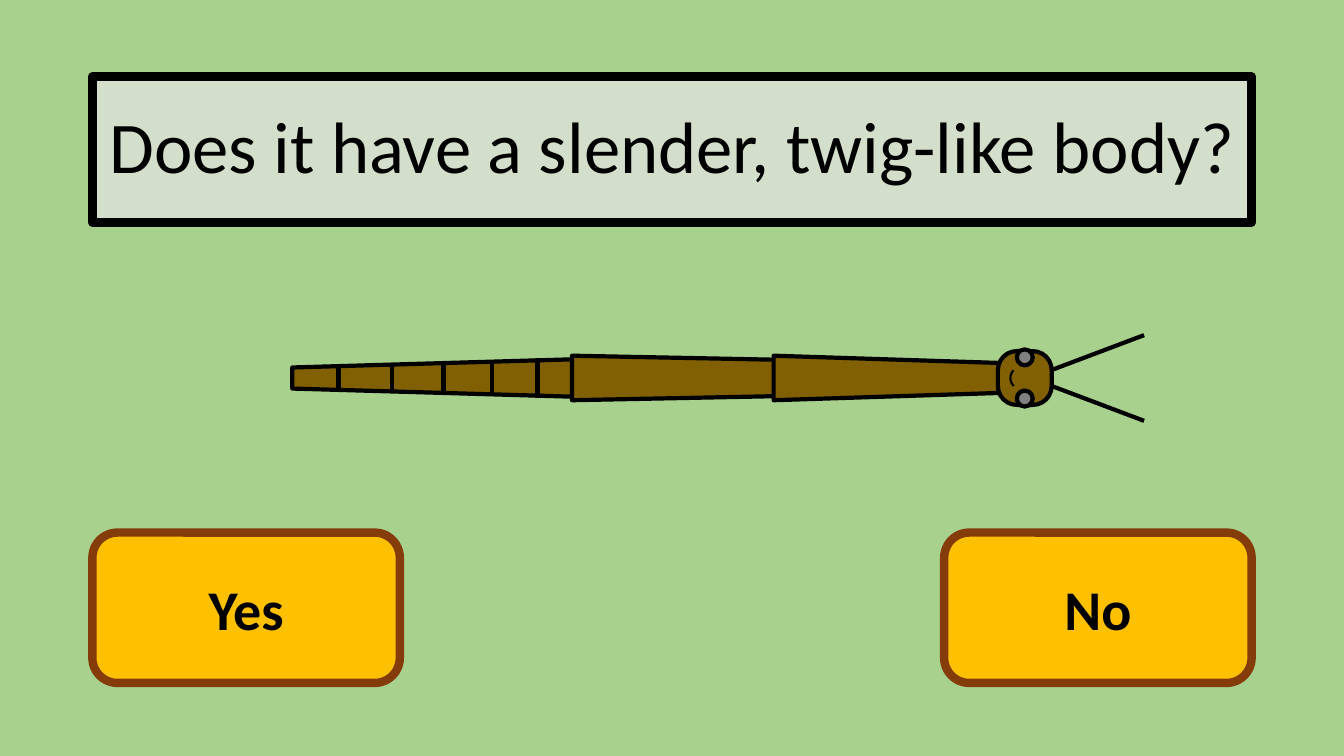
from lxml.etree import SubElement
from pptx import Presentation
from pptx.dml.color import RGBColor
from pptx.enum.shapes import MSO_CONNECTOR as Connector, MSO_SHAPE as Preset
from pptx.enum.text import MSO_ANCHOR as Anchor, PP_ALIGN as Align
from pptx.oxml.ns import qn
from pptx.util import Inches, Pt

COLORS = {
    "meadow": "A9D18E", "panel": "E7E6E6", "ink": "000000", "button": "FFC000",
    "button_edge": "843C0B", "bark": "806000", "eye": "808080",
}
COLUMNS, ROWS = 160, 90
WIDTH, HEIGHT = Inches(13.333), Inches(7.5)


def color(name):
    """Return a named colour."""
    return RGBColor.from_string(COLORS[name])


def across(columns):
    """Turn grid columns into a length."""
    return round(WIDTH * columns / COLUMNS)


def down(rows):
    """Turn grid rows into a length."""
    return round(HEIGHT * rows / ROWS)


def add_preset(shapes, preset, box, fill, edge="ink", weight=3, rotation=0, adjust=None):
    """Add a filled preset shape in a grid box of left, top, width and height."""
    left, top, width, height = box
    shape = shapes.add_shape(preset, across(left), down(top), across(width), down(height))
    shape.shadow.inherit = False
    shape.rotation = rotation
    if adjust is not None:
        shape.adjustments[0] = adjust
    if fill:
        shape.fill.solid()
        shape.fill.fore_color.rgb = color(fill)
    else:
        shape.fill.background()
    shape.line.color.rgb = color(edge)
    shape.line.width = Pt(weight)
    return shape


def add_centered(shapes, preset, x, y, width, height, fill, **look):
    """Add a preset shape around a centre point."""
    return add_preset(shapes, preset, (x - width / 2, y - height / 2, width, height), fill, **look)


def add_line(shapes, start, end):
    """Draw a black line between two grid points."""
    line = shapes.add_connector(Connector.STRAIGHT, across(start[0]), down(start[1]),
                                across(end[0]), down(end[1]))
    line.line.color.rgb = color("ink")
    line.line.width = Pt(3)
    SubElement(line.element.spPr, qn("a:effectLst"))


def write(shape, text, size, bold, spacing=1.0):
    """Write one centred paragraph in a shape."""
    frame = shape.text_frame
    frame.word_wrap = True
    frame.vertical_anchor = Anchor.MIDDLE
    paragraph = frame.paragraphs[0]
    paragraph.alignment = Align.CENTER
    paragraph.line_spacing = spacing
    run = paragraph.add_run()
    run.text = text
    run.font.color.rgb = color("ink")
    for name, value in {"name": "Calibri", "size": Pt(size), "bold": bold}.items():
        setattr(run.font, name, value)


def add_question(slide, box, text):
    """Add the translucent question panel."""
    panel = add_preset(slide.shapes, Preset.RECTANGLE, box, "panel", weight=6)
    tint = panel.element.spPr.find(qn("a:solidFill"))[0]
    SubElement(tint, qn("a:alpha"), val="70000")
    SubElement(panel.element.spPr.find(qn("a:ln")), qn("a:round"))
    write(panel, text, 52, False, 0.9)


def add_button(slide, box, text):
    """Add an answer button."""
    button = add_preset(slide.shapes, Preset.ROUNDED_RECTANGLE, box, "button", "button_edge", 6)
    write(button, text, 40, True)


def add_stick_insect(slide, box):
    """Draw the stick insect along the middle of its box."""
    left, top, width, height = box
    axis = top + height / 2
    shapes = slide.shapes.add_group_shape().shapes
    segments = [(18, 4.6, 36, 270, 0.227), (46.7, 5.3, 26.8, 90, 0.1), (70.7, 5.3, 26.8, 90, 0.163)]
    for x, thickness, length, rotation, taper in segments:
        add_centered(shapes, Preset.TRAPEZOID, left + x, axis, thickness, length, "bark",
                     rotation=rotation, adjust=taper)
    add_centered(shapes, Preset.ROUNDED_RECTANGLE, left + 87.2, axis, 6.4, 6.4, "bark", adjust=0.351)
    for x, reach in [(5.5, 1.5), (11.9, 1.5), (18, 1.75), (23.8, 1.75), (29.2, 2.35)]:
        add_line(shapes, (left + x, axis - reach), (left + x, axis + reach))
    for side in (-1, 1):
        add_centered(shapes, Preset.OVAL, left + 87.2, axis + side * 2.45, 1.9, 1.9, "eye")
        add_line(shapes, (left + 90.4, axis + side * 0.95), (left + width, axis + side * height / 2))
    add_centered(shapes, Preset.ARC, left + 86.8, axis, 2.64, 2.64, None, weight=1.5, rotation=224)


def main():
    """Build and save the slide."""
    presentation = Presentation()
    presentation.slide_width, presentation.slide_height = WIDTH, HEIGHT
    slide = presentation.slides.add_slide(presentation.slide_layouts[6])
    slide.background.fill.solid()
    slide.background.fill.fore_color.rgb = color("meadow")
    margin, button_width = 11, 36.6
    add_question(slide, (margin, 9.1, COLUMNS - 2 * margin, 17.4),
                 "Does it have a slender, twig-like body?")
    for text, left in [("Yes", margin), ("No", COLUMNS - margin - button_width)]:
        add_button(slide, (left, 63.4, button_width, 17.9), text)
    add_stick_insect(slide, (34.8, 39.9, 101.4, 10.2))
    presentation.save("out.pptx")


if __name__ == "__main__":
    main()
